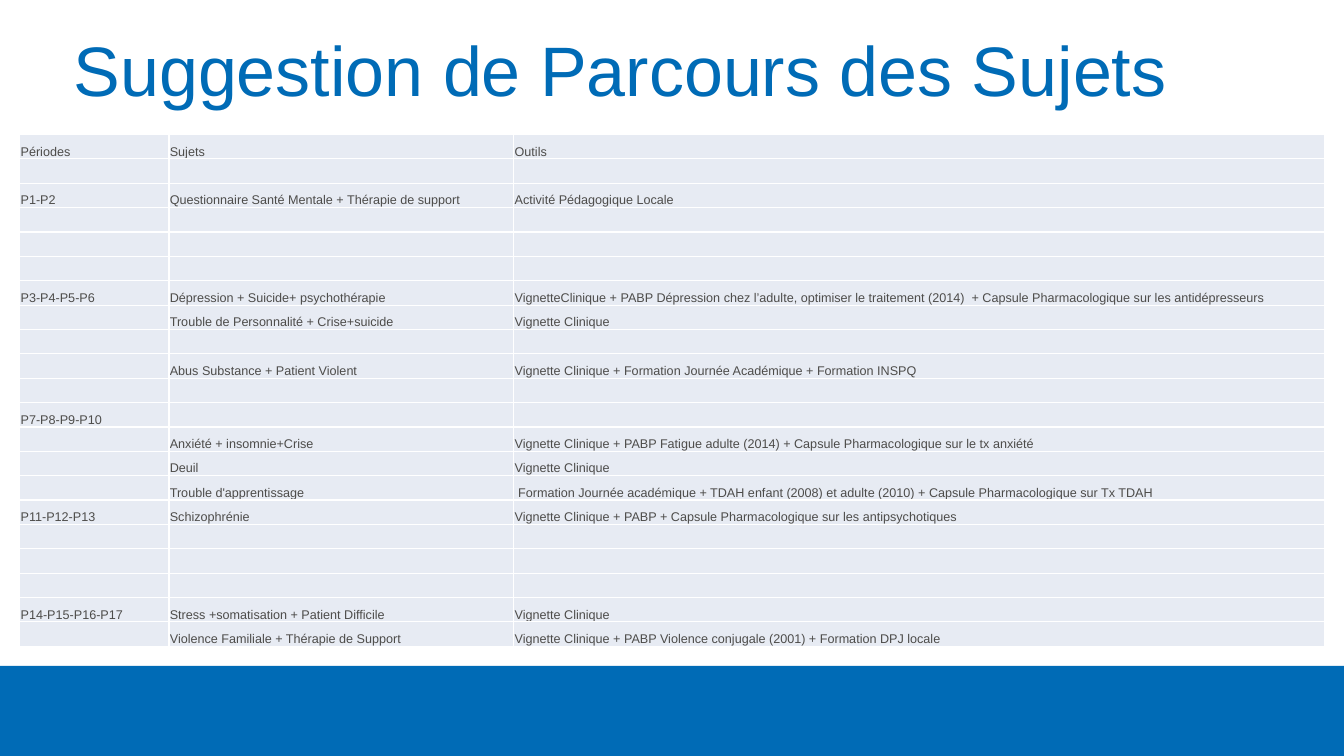
from dataclasses import dataclass

from lxml.etree import SubElement
from pptx import Presentation
from pptx.dml.color import RGBColor as RGB
from pptx.enum.shapes import MSO_SHAPE as Shape
from pptx.enum.text import MSO_ANCHOR as Anchor, MSO_AUTO_SIZE as AutoSize, PP_ALIGN as Align
from pptx.oxml.ns import qn
from pptx.util import Cm, Pt


@dataclass(frozen=True)
class Theme:
    font: str = "Arial"
    blue: RGB = RGB(0x00, 0x6B, 0xB6)
    text: RGB = RGB(0x4D, 0x4C, 0x4A)
    cell: RGB = RGB(0xE7, 0xEB, 0xF3)
    border: RGB = RGB(0xFF, 0xFF, 0xFF)
    title_size: Pt = Pt(50)
    cell_size: Pt = Pt(9)
    border_width: Pt = Pt(1)


theme = Theme()


def apply(target, values):
    for name, value in values.items():
        setattr(target, name, value)


def add_borders(cell):
    properties = cell._tc.get_or_add_tcPr()
    for side in ("a:lnL", "a:lnR", "a:lnT", "a:lnB"):
        line = SubElement(properties, qn(side), w=str(theme.border_width))
        fill = SubElement(line, qn("a:solidFill"))
        SubElement(fill, qn("a:srgbClr"), val=str(theme.border))


# Slide
deck = Presentation()
apply(deck, {"slide_width": Cm(33.87), "slide_height": Cm(19.05)})
slide = deck.slides.add_slide(deck.slide_layouts[5])

# Blue footer band
footer_top = Cm(16.78)
footer = slide.shapes.add_shape(
    Shape.RECTANGLE, 0, footer_top, deck.slide_width, deck.slide_height - footer_top)
footer.shadow.inherit = False
footer.fill.solid()
footer.fill.fore_color.rgb = theme.blue
footer.line.fill.background()

# Title
heading = slide.shapes.title
apply(heading, {"left": Cm(1.6), "top": 0, "width": Cm(30.56), "height": Cm(2.95)})
heading.text_frame.text = "Suggestion de Parcours des Sujets"
apply(heading.text_frame, {"vertical_anchor": Anchor.BOTTOM, "word_wrap": True,
                           "auto_size": AutoSize.NONE})
heading_line = heading.text_frame.paragraphs[0]
apply(heading_line, {"alignment": Align.LEFT, "line_spacing": 0.9})
apply(heading_line.runs[0].font, {"name": theme.font, "size": theme.title_size})
heading_line.runs[0].font.color.rgb = theme.blue

# Course plan: period, subjects, tools
blank = ("", "", "")
plan = [
    ("Périodes", "Sujets", "Outils"),
    blank,
    ("P1-P2", "Questionnaire Santé Mentale + Thérapie de support", "Activité Pédagogique Locale"),
    blank,
    blank,
    blank,
    ("P3-P4-P5-P6", "Dépression + Suicide+ psychothérapie",
     "VignetteClinique + PABP Dépression chez l’adulte, optimiser le traitement (2014)  "
     "+ Capsule Pharmacologique sur les antidépresseurs"),
    ("", "Trouble de Personnalité + Crise+suicide", "Vignette Clinique"),
    blank,
    ("", "Abus Substance + Patient Violent",
     "Vignette Clinique + Formation Journée Académique + Formation INSPQ"),
    blank,
    ("P7-P8-P9-P10", "", ""),
    ("", "Anxiété + insomnie+Crise",
     "Vignette Clinique + PABP Fatigue adulte (2014) "
     "+ Capsule Pharmacologique sur le tx anxiété"),
    ("", "Deuil", "Vignette Clinique"),
    ("", "Trouble d'apprentissage",
     " Formation Journée académique + TDAH enfant (2008) et adulte (2010) "
     "+ Capsule Pharmacologique sur Tx TDAH"),
    ("P11-P12-P13", "Schizophrénie",
     "Vignette Clinique + PABP + Capsule Pharmacologique sur les antipsychotiques"),
    blank,
    blank,
    blank,
    ("P14-P15-P16-P17", "Stress +somatisation + Patient Difficile", "Vignette Clinique"),
    ("", "Violence Familiale + Thérapie de Support",
     "Vignette Clinique + PABP Violence conjugale (2001) + Formation DPJ locale"),
]
column_widths = [Cm(3.76), Cm(8.69), Cm(20.42)]

# Table grid with equal rows
schedule = slide.shapes.add_table(
    len(plan), len(column_widths), Cm(0.5), Cm(3.39), sum(column_widths), Cm(12.91)).table
apply(schedule, {"first_row": False, "horz_banding": False})
for column, width in zip(schedule.columns, column_widths):
    column.width = width

# Table cells
cell_format = {"vertical_anchor": Anchor.BOTTOM, "margin_left": Cm(0.02),
               "margin_right": Cm(0.02), "margin_top": Cm(0.02), "margin_bottom": 0}
for row, entries in zip(schedule.rows, plan):
    for cell, entry in zip(row.cells, entries):
        apply(cell, cell_format)
        add_borders(cell)
        cell.fill.solid()
        cell.fill.fore_color.rgb = theme.cell
        paragraph = cell.text_frame.paragraphs[0]
        if entry:
            run = paragraph.add_run()
            run.text = entry
            apply(run.font, {"name": theme.font, "size": theme.cell_size})
            run.font.color.rgb = theme.text
        else:
            # Small type keeps the empty rows at their set height
            SubElement(paragraph._p, qn("a:endParaRPr"), sz=str(int(theme.cell_size.pt * 100)))

deck.save("out.pptx")
